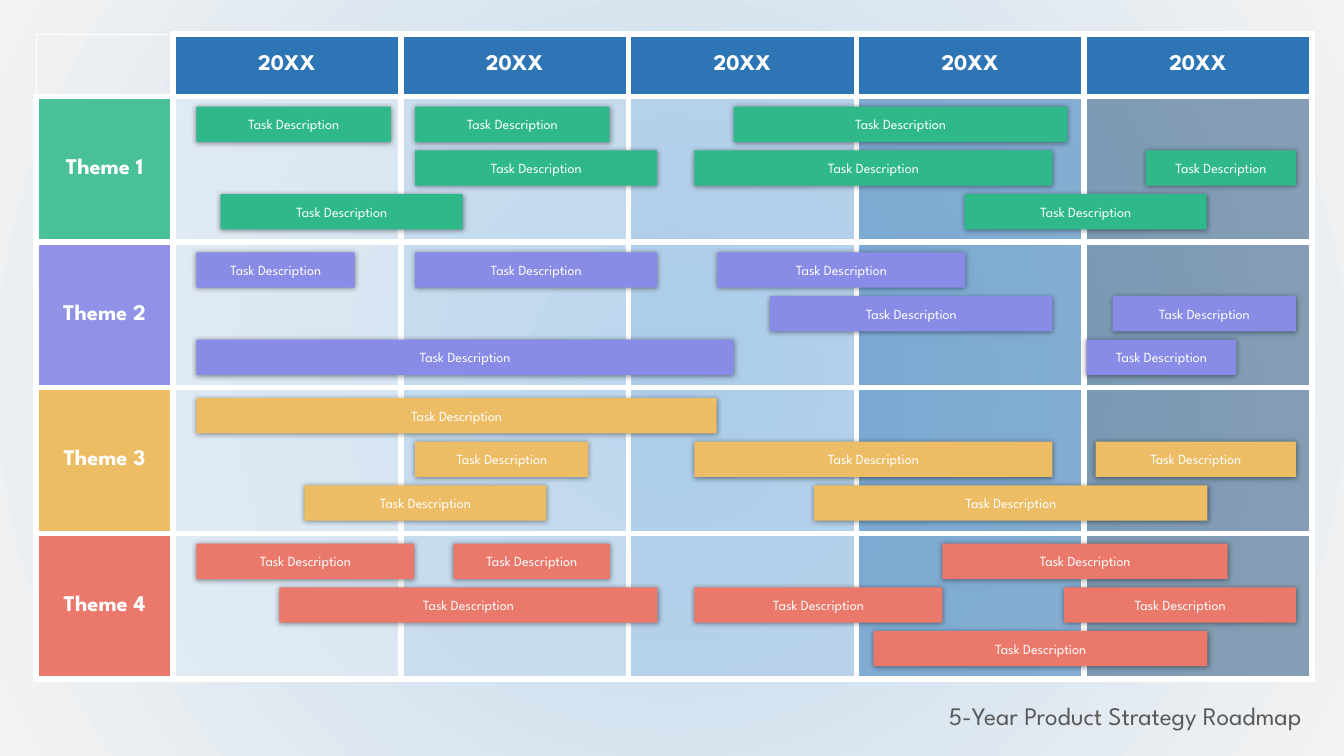
from pptx import Presentation
from pptx.dml.color import RGBColor
from pptx.enum.shapes import MSO_SHAPE as Shape
from pptx.enum.text import MSO_ANCHOR as Anchor, MSO_AUTO_SIZE as AutoSize, PP_ALIGN as Align
from pptx.oxml import parse_xml
from pptx.oxml.ns import nsdecls, qn
from pptx.util import Cm, Pt
from lxml.etree import SubElement

FONT = "League Spartan"
COLORS = {
    "white": "FFFFFF", "black": "000000", "title": "595959", "header": "2E75B6",
    "glow": "BDD7EE", "edge": "F2F2F2",
    "green": "2FB98A", "violet": "898CE6", "amber": "EDBD65", "coral": "EA786B",
    "year1": "DEEBF7", "year2": "BDD7EE", "year3": "9DC3E6", "year4": "2E75B6", "year5": "1F4E79",
}
YEARS = ["year1", "year2", "year3", "year4", "year5"]
YEAR_OPACITY = 50

LABEL_WIDTH, YEAR_WIDTH = 3.45, 5.74
HEADER_HEIGHT, THEME_HEIGHT = 1.57, 3.67
LANE_START, LANE_PITCH, BAR_HEIGHT = 0.26, 1.1, 0.89

# Each task is (lane, start, length), measured in cm from the first year.
THEMES = [
    ("Theme 1", "green", 85, [
        (0, 0.59, 4.9), (0, 6.1, 4.9), (1, 6.1, 6.1), (2, 1.2, 6.1),
        (0, 14.13, 8.41), (1, 13.14, 9.02), (2, 19.95, 6.1), (1, 24.52, 3.78)]),
    ("Theme 2", "violet", 93, [
        (0, 0.59, 3.99), (0, 6.1, 6.1), (2, 0.59, 13.54), (0, 13.72, 6.25),
        (1, 15.05, 7.11), (2, 23.02, 3.78), (1, 23.68, 4.62)]),
    ("Theme 3", "amber", 100, [
        (0, 0.59, 13.11), (1, 6.1, 4.37), (2, 3.31, 6.1), (1, 13.14, 9.02),
        (2, 16.16, 9.91), (1, 23.25, 5.05)]),
    ("Theme 4", "coral", 100, [
        (0, 0.59, 5.49), (0, 7.07, 3.94), (1, 2.68, 9.53), (0, 19.39, 7.19),
        (1, 13.14, 6.25), (2, 17.66, 8.41), (1, 22.46, 5.84)]),
]


def color(name):
    return RGBColor.from_string(COLORS[name])


def write(frame, text, size, shade="white", align=Align.CENTER, bold=False):
    para = frame.paragraphs[0]
    para.alignment = align
    span = para.add_run()
    span.text = text
    span.font.name = FONT
    span.font.size = Pt(size)
    span.font.bold = bold
    span.font.color.rgb = color(shade)


def set_background(page):
    page.element.cSld.insert(0, parse_xml(
        f'<p:bg {nsdecls("p", "a")}><p:bgPr><a:gradFill rotWithShape="1"><a:gsLst>'
        f'<a:gs pos="0"><a:srgbClr val="{COLORS["glow"]}"/></a:gs>'
        f'<a:gs pos="99000"><a:srgbClr val="{COLORS["edge"]}"/></a:gs></a:gsLst>'
        '<a:path path="circle"><a:fillToRect l="50000" t="50000" r="50000" b="50000"/></a:path>'
        '</a:gradFill><a:effectLst/></p:bgPr></p:bg>'))


def fill_cell(cell, shade, opacity=100):
    cell.fill.solid()
    cell.fill.fore_color.rgb = color(shade)
    if opacity < 100:
        tint = next(cell._tc.tcPr.iter(qn("a:srgbClr")))
        SubElement(tint, qn("a:alpha"), val=str(opacity * 1000))


def border_cell(cell, sides):
    for index, side in enumerate(sides):
        cell._tc.tcPr.insert(index, parse_xml(
            f'<a:ln{side} {nsdecls("a")} w="{Pt(4.5)}"><a:solidFill>'
            f'<a:srgbClr val="{COLORS["white"]}"/></a:solidFill></a:ln{side}>'))


def label_cell(cell, text):
    cell.vertical_anchor = Anchor.MIDDLE
    write(cell.text_frame, text, 16, bold=True)


def add_grid(page, left, top):
    width = LABEL_WIDTH + YEAR_WIDTH * len(YEARS)
    height = HEADER_HEIGHT + THEME_HEIGHT * len(THEMES)
    grid = page.shapes.add_table(len(THEMES) + 1, len(YEARS) + 1,
                                 Cm(left), Cm(top), Cm(width), Cm(height)).table
    grid.first_row = grid.horz_banding = False
    for index, column in enumerate(grid.columns):
        column.width = Cm(YEAR_WIDTH if index else LABEL_WIDTH)
    for index, row in enumerate(grid.rows):
        row.height = Cm(THEME_HEIGHT if index else HEADER_HEIGHT)

    grid.cell(0, 0).fill.background()
    border_cell(grid.cell(0, 0), "RB")
    for column in range(1, len(YEARS) + 1):
        header = grid.cell(0, column)
        fill_cell(header, "header")
        label_cell(header, "20XX")
        border_cell(header, "LRTB")
    for row, (name, shade, opacity, tasks) in enumerate(THEMES, 1):
        label_cell(grid.cell(row, 0), name)
        fills = [(shade, opacity)] + [(year, YEAR_OPACITY) for year in YEARS]
        for column, (tint, strength) in enumerate(fills):
            fill_cell(grid.cell(row, column), tint, strength)
            border_cell(grid.cell(row, column), "LRTB")


def add_bar(page, left, top, width, shade):
    bar = page.shapes.add_shape(Shape.RECTANGLE, Cm(left), Cm(top), Cm(width), Cm(BAR_HEIGHT))
    bar.fill.solid()
    bar.fill.fore_color.rgb = color(shade)
    bar.line.fill.background()
    bar.shadow.inherit = False
    bar.element.spPr.find(qn("a:effectLst")).append(parse_xml(
        f'<a:outerShdw {nsdecls("a")} blurRad="{Pt(4)}" dist="{Pt(0.5)}" dir="5400000" '
        f'algn="ctr" rotWithShape="0"><a:srgbClr val="{COLORS["black"]}">'
        '<a:alpha val="43000"/></a:srgbClr></a:outerShdw>'))
    bar.text_frame.word_wrap = True
    bar.text_frame.vertical_anchor = Anchor.MIDDLE
    write(bar.text_frame, "Task Description", 10)


def add_theme_tasks(page, left, top, shade, tasks):
    for lane, start, length in tasks:
        add_bar(page, left + start, top + LANE_START + lane * LANE_PITCH, length, shade)


def add_title(page, left, top, width, height):
    box = page.shapes.add_textbox(Cm(left), Cm(top), Cm(width), Cm(height))
    box.text_frame.word_wrap = True
    box.text_frame.auto_size = AutoSize.SHAPE_TO_FIT_TEXT
    write(box.text_frame, "5-Year Product Strategy Roadmap", 18, "title", Align.RIGHT)


def add_roadmap(page, left, top):
    add_grid(page, left, top)
    for index, (name, shade, opacity, tasks) in enumerate(THEMES):
        add_theme_tasks(page, left + LABEL_WIDTH,
                        top + HEADER_HEIGHT + index * THEME_HEIGHT, shade, tasks)


def main():
    deck = Presentation()
    deck.slide_width, deck.slide_height = Cm(33.87), Cm(19.05)
    page = deck.slides.add_slide(deck.slide_layouts[6])
    set_background(page)
    add_title(page, 17.07, 17.53, 15.98, 1.02)
    add_roadmap(page, 0.91, 0.86)
    deck.save("out.pptx")


if __name__ == "__main__":
    main()
